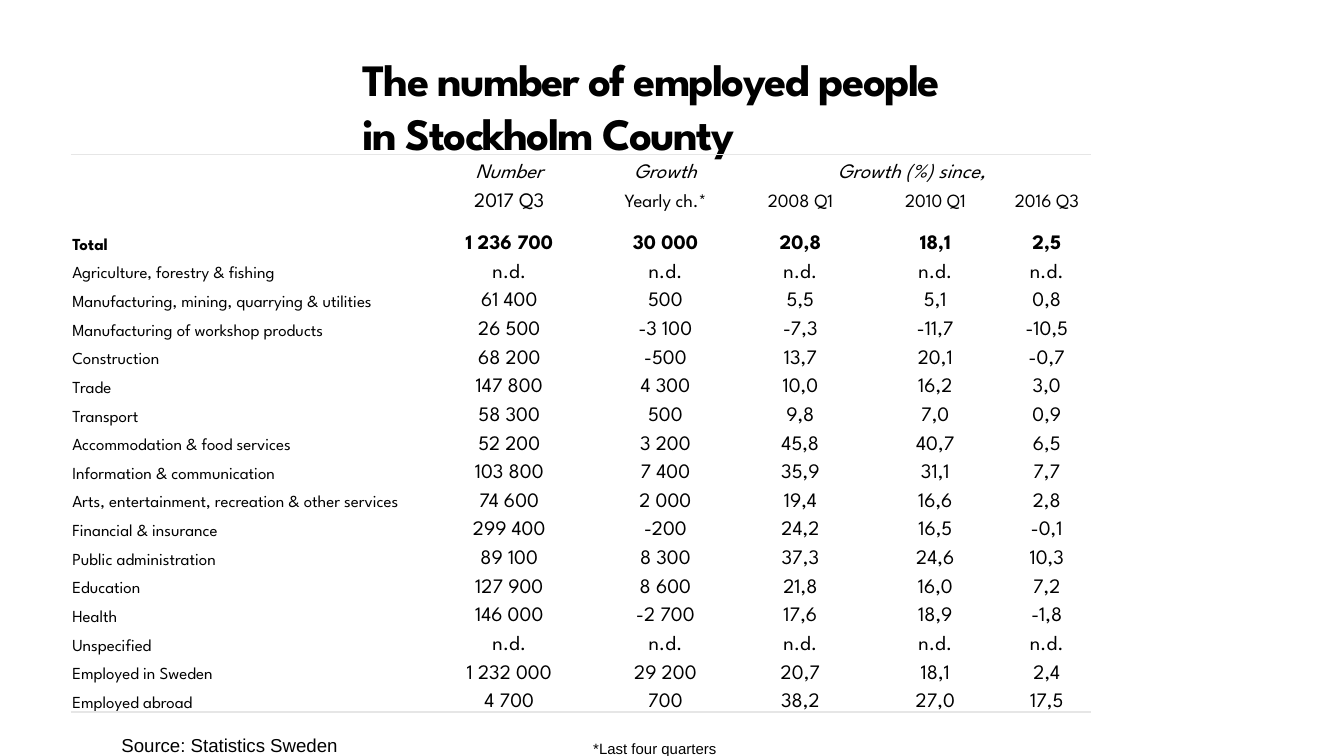
from lxml.etree import SubElement
from pptx import Presentation
from pptx.dml.color import RGBColor
from pptx.enum.text import MSO_ANCHOR, MSO_AUTO_SIZE, PP_ALIGN
from pptx.oxml.ns import qn
from pptx.util import Inches, Pt

COLORS = {"text": "000000", "rule": "E6E6E6"}
FONTS = {"main": "League Spartan", "note": "Arial"}
NO_STYLE = "{2D5ABB26-0587-4C30-8999-92F81FD0307C}"

HEADERS = [
    ["", "Number", "Growth", "Growth (%) since,", "", ""],
    ["", "2017 Q3", "Yearly ch.*", "2008 Q1", "2010 Q1", "2016 Q3"],
]
SECTORS = [
    ["Total", "1 236 700", "30 000", "20,8", "18,1", "2,5"],
    ["Agriculture, forestry & fishing"] + ["n.d."] * 5,
    ["Manufacturing, mining, quarrying & utilities", "61 400", "500", "5,5", "5,1", "0,8"],
    ["Manufacturing of workshop products", "26 500", "-3 100", "-7,3", "-11,7", "-10,5"],
    ["Construction", "68 200", "-500", "13,7", "20,1", "-0,7"],
    ["Trade", "147 800", "4 300", "10,0", "16,2", "3,0"],
    ["Transport", "58 300", "500", "9,8", "7,0", "0,9"],
    ["Accommodation & food services", "52 200", "3 200", "45,8", "40,7", "6,5"],
    ["Information & communication", "103 800", "7 400", "35,9", "31,1", "7,7"],
    ["Arts, entertainment, recreation & other services", "74 600", "2 000", "19,4", "16,6", "2,8"],
    ["Financial & insurance", "299 400", "-200", "24,2", "16,5", "-0,1"],
    ["Public administration", "89 100", "8 300", "37,3", "24,6", "10,3"],
    ["Education", "127 900", "8 600", "21,8", "16,0", "7,2"],
    ["Health", "146 000", "-2 700", "17,6", "18,9", "-1,8"],
    ["Unspecified"] + ["n.d."] * 5,
    ["Employed in Sweden", "1 232 000", "29 200", "20,7", "18,1", "2,4"],
    ["Employed abroad", "4 700", "700", "38,2", "27,0", "17,5"],
]


class SlideBuilder:
    """Holds the style and the slide; lengths are hundredths of the slide width."""

    def __init__(self, deck):
        self.unit = deck.slide_width / 100
        self.slide = deck.slides.add_slide(deck.slide_layouts[5])

    def grid(self, *lengths):
        return [round(length * self.unit) for length in lengths]

    def add_run(self, para, text, size, font="main", bold=False, italic=False):
        span = para.add_run()
        span.text = text
        span.font.name = FONTS[font]
        span.font.size = Pt(size)
        span.font.bold = bold
        span.font.italic = italic
        span.font.color.rgb = RGBColor.from_string(COLORS["text"])
        return span

    def clear_frame(self, frame, wrap):
        frame.margin_left = frame.margin_right = 0
        frame.margin_top = frame.margin_bottom = 0
        frame.auto_size = MSO_AUTO_SIZE.NONE
        frame.vertical_anchor = MSO_ANCHOR.TOP
        frame.word_wrap = wrap
        return frame.paragraphs[0]

    def title(self, lines, area, size):
        box = self.slide.shapes.title
        box.left, box.top, box.width, box.height = self.grid(*area)
        para = self.clear_frame(box.text_frame, True)
        para.alignment = PP_ALIGN.LEFT
        for index, line in enumerate(lines):
            if index:
                para.add_line_break()
            span = self.add_run(para, line, size, bold=True)
            span.font._element.set("spc", "-90")

    def note(self, text, area, size):
        box = self.slide.shapes.add_textbox(*self.grid(*area))
        para = self.clear_frame(box.text_frame, False)
        para.line_spacing = Pt(24)
        self.add_run(para, text, size, "note")

    def border(self, cell, side):
        line = SubElement(cell._tc.get_or_add_tcPr(), qn(f"a:{side}"), w=str(Pt(1)))
        fill = SubElement(line, qn("a:solidFill"))
        SubElement(fill, qn("a:srgbClr"), val=COLORS["rule"])
        cell._tc.tcPr.insert(0, line)

    def cell(self, cell, text, size, centred, **style):
        cell.fill.background()
        cell.vertical_anchor = MSO_ANCHOR.BOTTOM
        cell.margin_left = cell.margin_right = cell.margin_top = Inches(0.01)
        cell.margin_bottom = 0
        para = cell.text_frame.paragraphs[0]
        para.alignment = PP_ALIGN.CENTER if centred else PP_ALIGN.LEFT
        if text:
            self.add_run(para, text, size, **style)
        else:
            # Keeps an empty cell from stretching its row
            SubElement(para._p, qn("a:endParaRPr"), sz=str(size * 100))

    def table(self, rows, corner, widths, heights):
        area = self.grid(*corner, sum(widths), sum(heights))
        frame = self.slide.shapes.add_table(len(rows), len(widths), *area)
        table = frame.table
        table.first_row = table.horz_banding = False
        table._tbl.tblPr.find(qn("a:tableStyleId")).text = NO_STYLE
        for column, width in zip(table.columns, self.grid(*widths)):
            column.width = width
        for row, height in zip(table.rows, self.grid(*heights)):
            row.height = height

        last = len(rows) - 1
        for r, values in enumerate(rows):
            for c, value in enumerate(values):
                if r == 1 and c > 1:
                    size = 10
                else:
                    size = 9 if r > 1 and c == 0 else 11
                cell = table.cell(r, c)
                self.cell(cell, value, size, c > 0, bold=r == 2, italic=r == 0)
                if r in (0, last):
                    self.border(cell, "lnT" if r == 0 else "lnB")
        table.cell(0, 3).merge(table.cell(0, 5))


def main():
    deck = Presentation()
    deck.slide_width = Inches(10)
    deck.slide_height = deck.slide_width * 9 // 16
    page = SlideBuilder(deck)

    # Heading
    page.title(["The number of employed people", "in Stockholm County"], (27, 3.84, 92, 8), 24)

    # Source line
    page.note("Source: Statistics Sweden", (9.04, 52.96, 10, 4.2), 10)

    # Employment table: two header rows, a taller total row, equal sector rows
    heights = [2.13] * 2 + [3.15] + [2.13] * (len(SECTORS) - 1)
    page.table(HEADERS + SECTORS, (5.28, 11.5), [26.02, 13.2, 10.04, 10.04, 10.04, 6.55], heights)

    # Footnote
    page.note("*Last four quarters", (44.14, 53, 10, 4.2), 8)

    deck.save("out.pptx")


if __name__ == "__main__":
    main()
